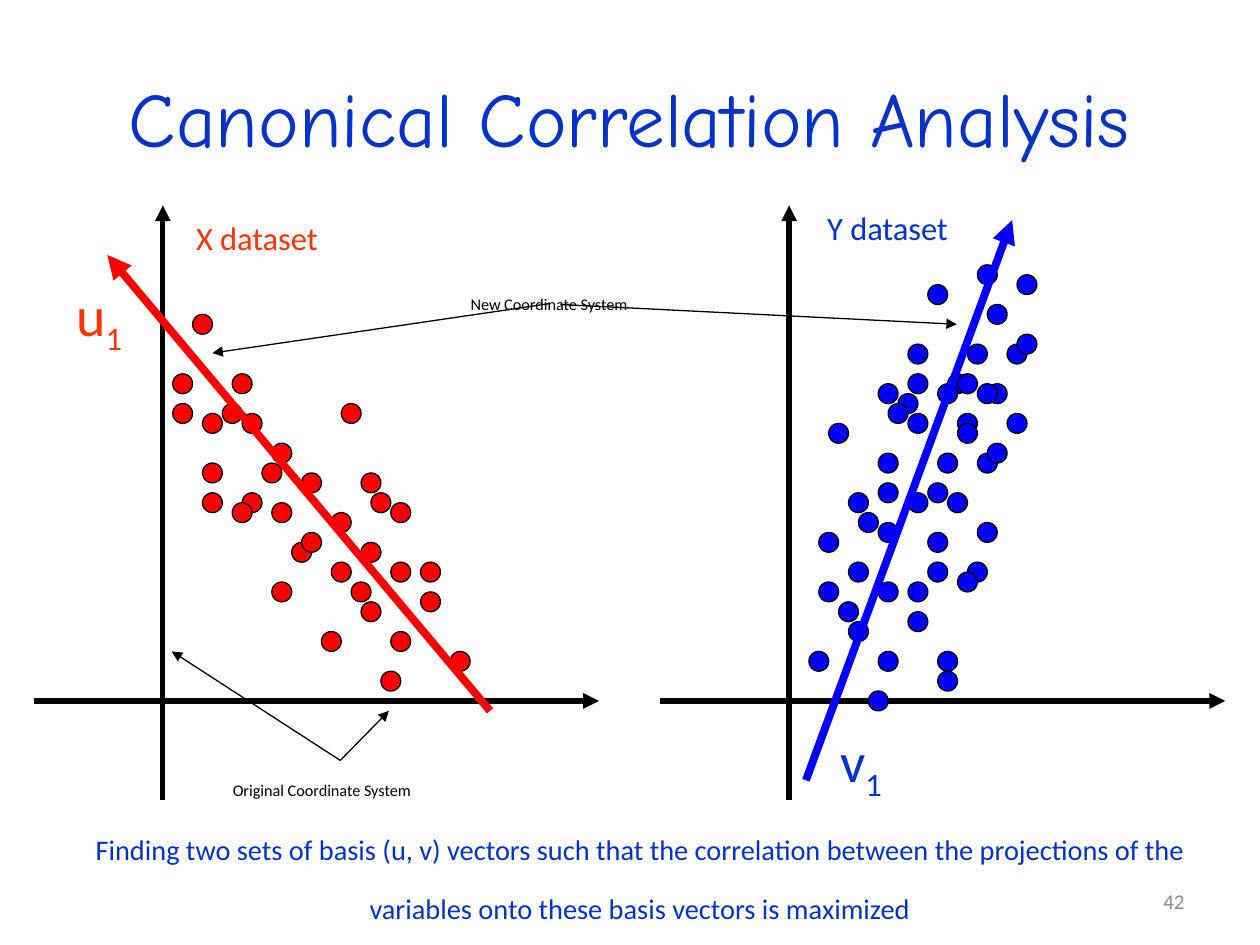
import pptx
import pptx.dml.color
import pptx.enum.shapes
import pptx.enum.text
import pptx.oxml.ns
import pptx.util
from lxml import etree

BLACK = pptx.dml.color.RGBColor(0x00, 0x00, 0x00)
GREY = pptx.dml.color.RGBColor(0x8C, 0x8C, 0x8C)
RED = pptx.dml.color.RGBColor(0xFF, 0x00, 0x00)
BLUE = pptx.dml.color.RGBColor(0x00, 0x00, 0xFF)
ORANGE_TEXT = pptx.dml.color.RGBColor(0xFF, 0x33, 0x00)
BLUE_TEXT = pptx.dml.color.RGBColor(0x00, 0x33, 0xCC)

PANEL_TOP, PANEL_HEIGHT = 1.63, 4.72
UNIT = PANEL_HEIGHT / 60
PANEL_COLUMNS, AXIS_COLUMN, AXIS_ROW = 57, 13, 50
LEFT_PANEL, RIGHT_PANEL = 0.27, 5.24
RAISED, LOWERED = 30000, -25000

X_POINTS = [
    (1, 17), (3, 11), (4, 21), (1, 20), (7, 17), (8, 21), (11, 24), (14, 27), (8, 29),
    (13, 34), (18, 20), (20, 27), (23, 30), (20, 34), (17, 31), (19, 38), (26, 36),
    (4, 26), (6, 20), (7, 30), (4, 29), (10, 26), (11, 30), (14, 33), (17, 36),
    (11, 38), (16, 43), (21, 29), (23, 36), (26, 39), (23, 43), (20, 40), (22, 47),
    (29, 45),
]
Y_POINTS = [
    (9, 25), (11, 19), (12, 29), (9, 28), (15, 25), (16, 29), (19, 32), (20, 18),
    (18, 36), (19, 25), (4, 22), (6, 29), (9, 32), (6, 36), (3, 33), (5, 40), (12, 38),
    (14, 33), (14, 28), (17, 37), (14, 36), (16, 17), (17, 21), (20, 24), (3, 38),
    (15, 45), (2, 45), (7, 31), (9, 38), (12, 41), (9, 45), (6, 42), (8, 49), (15, 47),
    (12, 14), (14, 8), (15, 18), (12, 17), (18, 14), (19, 18), (22, 21), (23, 7),
    (22, 14), (9, 18), (12, 21), (17, 22), (17, 17), (19, 6), (20, 10), (23, 13),
    (10, 20),
]


def place(panel_left, column, row):
    """Return the slide position of a grid point in a panel."""
    return (pptx.util.Inches(panel_left + column * UNIT),
            pptx.util.Inches(PANEL_TOP + row * UNIT))


def add_run(paragraph, text, size, color, baseline=0, font="Calibri"):
    """Add one formatted run to a paragraph."""
    run = paragraph.add_run()
    run.text = text
    run.font.name = font
    run.font.size = pptx.util.Pt(size)
    run.font.color.rgb = color
    if baseline:
        run.font._element.set("baseline", str(baseline))


def add_text(slide, box, runs, size, color, wrap=True, alignment=None):
    """Add a one-paragraph text box made of (text, baseline) runs."""
    frame = slide.shapes.add_textbox(*box).text_frame
    frame.word_wrap = wrap
    paragraph = frame.paragraphs[0]
    paragraph.alignment = alignment
    for text, baseline in runs:
        add_run(paragraph, text, size, color, baseline)
    return frame


def add_label(slide, panel_left, grid_box, runs, size, color, wrap=True):
    """Add a text box given as column, row, columns and rows of a panel."""
    column, row, columns, rows = grid_box
    extent = (pptx.util.Inches(columns * UNIT), pptx.util.Inches(rows * UNIT))
    add_text(slide, place(panel_left, column, row) + extent, runs, size, color, wrap)


def add_arrow(slide, panel_left, start, end, color, width):
    """Add an arrow between two grid points of a panel."""
    connector = slide.shapes.add_connector(
        pptx.enum.shapes.MSO_CONNECTOR.STRAIGHT,
        *place(panel_left, *start), *place(panel_left, *end))
    connector.line.color.rgb = color
    connector.line.width = pptx.util.Pt(width)
    tail = etree.SubElement(connector.line._get_or_add_ln(), pptx.oxml.ns.qn("a:tailEnd"))
    tail.set("type", "triangle")
    etree.SubElement(connector._element.spPr, pptx.oxml.ns.qn("a:effectLst"))


def add_axes(slide, panel_left):
    """Draw the horizontal and vertical axes of a panel."""
    add_arrow(slide, panel_left, (0, AXIS_ROW), (PANEL_COLUMNS, AXIS_ROW), BLACK, 3)
    add_arrow(slide, panel_left, (AXIS_COLUMN, 60), (AXIS_COLUMN, 0), BLACK, 3)


def add_points(slide, panel_left, points, color):
    """Draw data points counted in columns from the vertical axis."""
    diameter = pptx.util.Inches(2 * UNIT)
    for column, row in points:
        position = place(panel_left, AXIS_COLUMN + column, row)
        point = slide.shapes.add_shape(
            pptx.enum.shapes.MSO_SHAPE.OVAL, *position, diameter, diameter)
        point.shadow.inherit = False
        point.fill.solid()
        point.fill.fore_color.rgb = color
        point.line.color.rgb = BLACK
        point.line.width = pptx.util.Pt(0.75)


def add_panel(slide, panel_left, points, color, text_color, name, name_box,
              vector, vector_name, vector_box):
    """Draw one dataset with its axes, points, basis vector and labels."""
    add_axes(slide, panel_left)
    add_points(slide, panel_left, points, color)
    add_label(slide, panel_left, name_box, [(name, RAISED)], 32, text_color)
    add_arrow(slide, panel_left, *vector, color, 4.5)
    add_label(slide, panel_left, vector_box, [(vector_name, 0), ("1", LOWERED)],
              32, text_color)


def add_callout(slide, panel_left, text, grid_box, pointers):
    """Add a small label with thin arrows."""
    add_label(slide, panel_left, grid_box, [(text, RAISED)], 16, BLACK, wrap=False)
    for start, end in pointers:
        add_arrow(slide, panel_left, start, end, BLACK, 0.75)


def add_title(slide, box):
    """Fill and place the title placeholder."""
    title = slide.shapes.title
    title.left, title.top, title.width, title.height = box
    frame = title.text_frame
    frame.vertical_anchor = pptx.enum.text.MSO_ANCHOR.MIDDLE
    paragraph = frame.paragraphs[0]
    paragraph.alignment = pptx.enum.text.PP_ALIGN.CENTER
    add_run(paragraph, "Canonical Correlation Analysis", 44, BLUE_TEXT, font="Comic Neue")


def add_footer(slide, caption_box, number_box):
    """Add the closing caption and the slide number."""
    caption = ("Finding two sets of basis (u, v) vectors such that the correlation between "
               "the projections of the variables onto these basis vectors is maximized")
    add_text(slide, caption_box, [(caption, RAISED)], 28, BLUE_TEXT,
             alignment=pptx.enum.text.PP_ALIGN.CENTER)
    number = add_text(slide, number_box, [("42", 0)], 12, GREY,
                      alignment=pptx.enum.text.PP_ALIGN.RIGHT)
    number.vertical_anchor = pptx.enum.text.MSO_ANCHOR.MIDDLE


def inches(*lengths):
    """Convert lengths to slide units."""
    return tuple(pptx.util.Inches(length) for length in lengths)


def main():
    """Build and save the slide."""
    presentation = pptx.Presentation()
    presentation.slide_width, presentation.slide_height = inches(10, 7.5)
    slide = presentation.slides.add_slide(presentation.slide_layouts[5])
    add_title(slide, inches(0.5, 0.3, 9, 1.25))
    add_panel(slide, RIGHT_PANEL, Y_POINTS, BLUE, BLUE_TEXT,
              "Y dataset", (15.6, -1, 23.3, 5.7),
              ((14.7, 58), (35.5, 1.5)), "v", (16.9, 52, 10, 8))
    add_panel(slide, LEFT_PANEL, X_POINTS, RED, ORANGE_TEXT,
              "X dataset", (15.1, 0, 23.3, 5.7),
              ((46, 51), (7.4, 5)), "u", (3, 7, 10, 8))
    add_callout(slide, LEFT_PANEL, "Original Coordinate System", (18.8, 57, 28.2, 3.6),
                [((30.9, 56), (13.9, 45)), ((30.9, 56), (35.8, 51))])
    add_callout(slide, LEFT_PANEL, "New Coordinate System", (42.8, 8, 25, 3.6),
                [((52.1, 9.9), (18, 14.9)), ((53.1, 10), (93.1, 12))])
    add_footer(slide, inches(0.27, 6.51, 9.61, 0.73), inches(7.17, 6.95, 2.33, 0.4))
    presentation.save("out.pptx")


if __name__ == "__main__":
    main()
